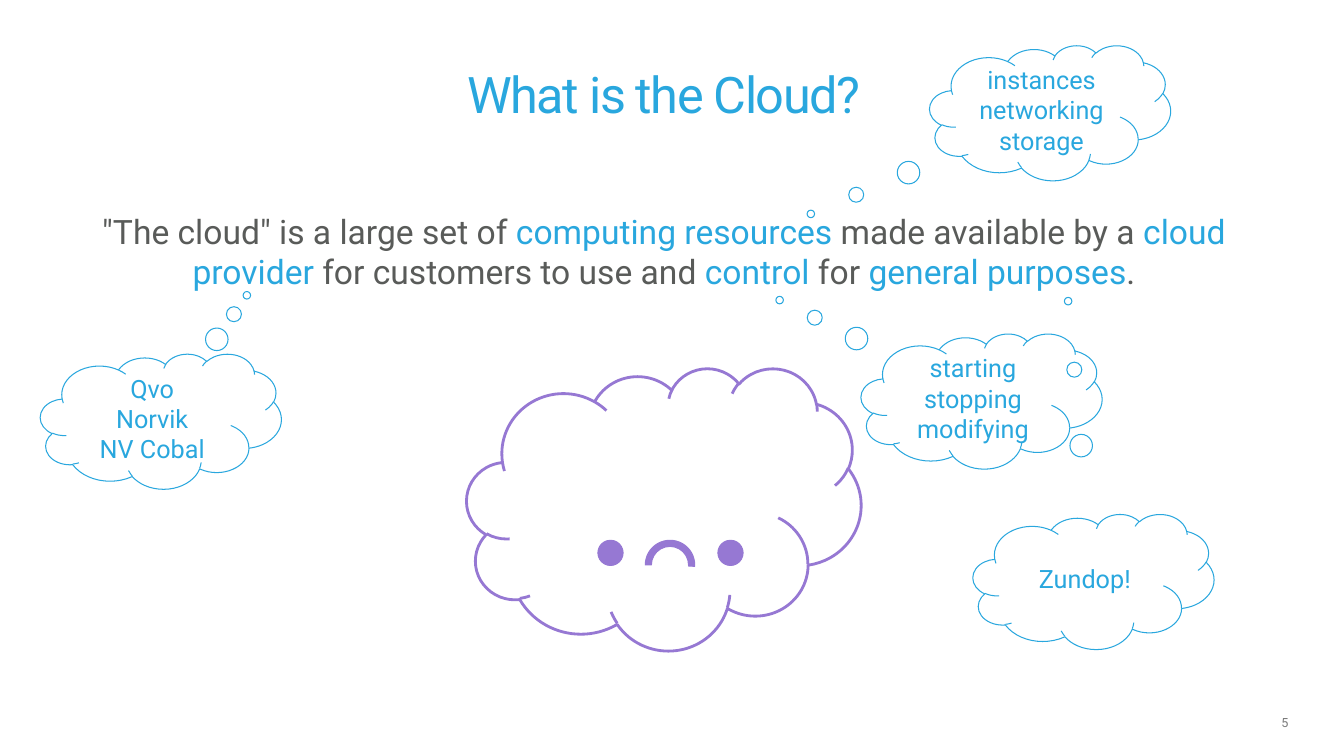
from pptx import Presentation
from pptx.dml.color import RGBColor
from pptx.enum import shapes, text
from pptx.util import Inches, Pt

BLUE = RGBColor(0x29, 0xA7, 0xDE)
GREY = RGBColor(0x59, 0x5B, 0x59)
LIGHT_GREY = RGBColor(0x7A, 0x7A, 0x7A)
PURPLE = RGBColor(0x96, 0x78, 0xD3)
WHITE = RGBColor(0xFF, 0xFF, 0xFF)
FONT = "Roboto"

DEFINITION = [
    ('"The cloud" is a large set of ', GREY),
    ("computing resources", BLUE),
    (" made available by a ", GREY),
    ("cloud provider", BLUE),
    (" for customers to use and ", GREY),
    ("control", BLUE),
    (" for ", GREY),
    ("general purposes", BLUE),
    (".", GREY),
]
THOUGHTS = [
    (9.22, 0.45, (-0.993, 0.748), ["instances", "networking", "storage"]),
    (0.4, 3.51, (0.357, -0.933), ["Qvo", "Norvik", "NV Cobal"]),
    (8.54, 3.31, (-0.838, -0.748), ["starting", "stopping modifying"]),
    (9.65, 5.1, (-0.105, -2.076), ["Zundop!"]),
]


def write(frame, paragraphs, *, size, align=text.PP_ALIGN.CENTER,
          anchor=text.MSO_ANCHOR.MIDDLE, line_spacing=None, tracking=None):
    """Fill a text frame with paragraphs, each a list of (words, colour) runs."""
    frame.word_wrap = True
    frame.auto_size = text.MSO_AUTO_SIZE.NONE
    frame.vertical_anchor = anchor
    for index, runs in enumerate(paragraphs):
        paragraph = frame.add_paragraph() if index else frame.paragraphs[0]
        paragraph.alignment = align
        paragraph.line_spacing = line_spacing
        for words, colour in runs:
            run = paragraph.add_run()
            run.text = words
            run.font.name = FONT
            run.font.size = Pt(size)
            run.font.color.rgb = colour
            if tracking is not None:
                run.font._element.set("spc", str(tracking))


def add_figure(slide, kind, box, *, line, fill=None, width=0.75, adjustments=()):
    """Add a preset shape without shadow and return it."""
    figure = slide.shapes.add_shape(kind, *map(Inches, box))
    figure.shadow.inherit = False
    for index, value in enumerate(adjustments):
        figure.adjustments[index] = value
    if fill is None:
        figure.fill.background()
    else:
        figure.fill.solid()
        figure.fill.fore_color.rgb = fill
    figure.line.color.rgb = line
    figure.line.width = Pt(width)
    return figure


def add_sad_cloud(slide):
    """Draw the purple cloud with its two eyes and frowning mouth."""
    kinds = shapes.MSO_SHAPE
    add_figure(slide, kinds.CLOUD, (4.63, 3.65, 3.91, 2.8), line=PURPLE, width=2)
    for eye_left in (5.93, 7.12):
        add_figure(slide, kinds.OVAL, (eye_left, 5.36, 0.25, 0.25),
                   line=PURPLE, fill=PURPLE)
    add_figure(slide, kinds.BLOCK_ARC, (6.4, 5.36, 0.49, 0.49),
               line=PURPLE, fill=PURPLE, adjustments=(108, 1.908, 0.124))


def add_thought(slide, left, top, pointer, lines):
    """Draw a thought bubble whose trail leads to a phrase."""
    bubble = add_figure(slide, shapes.MSO_SHAPE.CLOUD_CALLOUT,
                        (left, top, 2.39, 1.34), line=BLUE, fill=WHITE,
                        adjustments=pointer)
    write(bubble.text_frame, [[(line, BLUE)] for line in lines], size=18)


def add_title(slide):
    """Place and format the slide title."""
    title = slide.shapes.title
    title.left, title.top = Inches(0.4), Inches(0.65)
    title.width, title.height = Inches(12.37), Inches(0.66)
    write(title.text_frame, [[("What is the Cloud?", BLUE)]], size=36,
          line_spacing=0.8, tracking=-100)


def add_definition(slide):
    """Write the definition with its key phrases highlighted."""
    definition = slide.shapes.add_textbox(
        Inches(0.4), Inches(2.04), Inches(12.37), Inches(0.9))
    write(definition.text_frame, [DEFINITION], size=24,
          anchor=text.MSO_ANCHOR.TOP)


def add_page_number(slide):
    """Write the page number in the lower right corner."""
    number = slide.shapes.add_textbox(
        Inches(12.41), Inches(7.06), Inches(0.37), Inches(0.22)).text_frame
    number.margin_left = number.margin_right = 0
    number.margin_top = number.margin_bottom = 0
    write(number, [[("5", LIGHT_GREY)]], size=9, align=text.PP_ALIGN.RIGHT)


def main():
    """Build the slide and save it."""
    deck = Presentation()
    deck.slide_width, deck.slide_height = Inches(13.33), Inches(7.5)
    slide = deck.slides.add_slide(deck.slide_layouts.get_by_name("Title Only"))
    add_page_number(slide)
    add_title(slide)
    add_definition(slide)
    add_sad_cloud(slide)
    for thought in THOUGHTS:
        add_thought(slide, *thought)
    deck.save("out.pptx")


if __name__ == "__main__":
    main()
